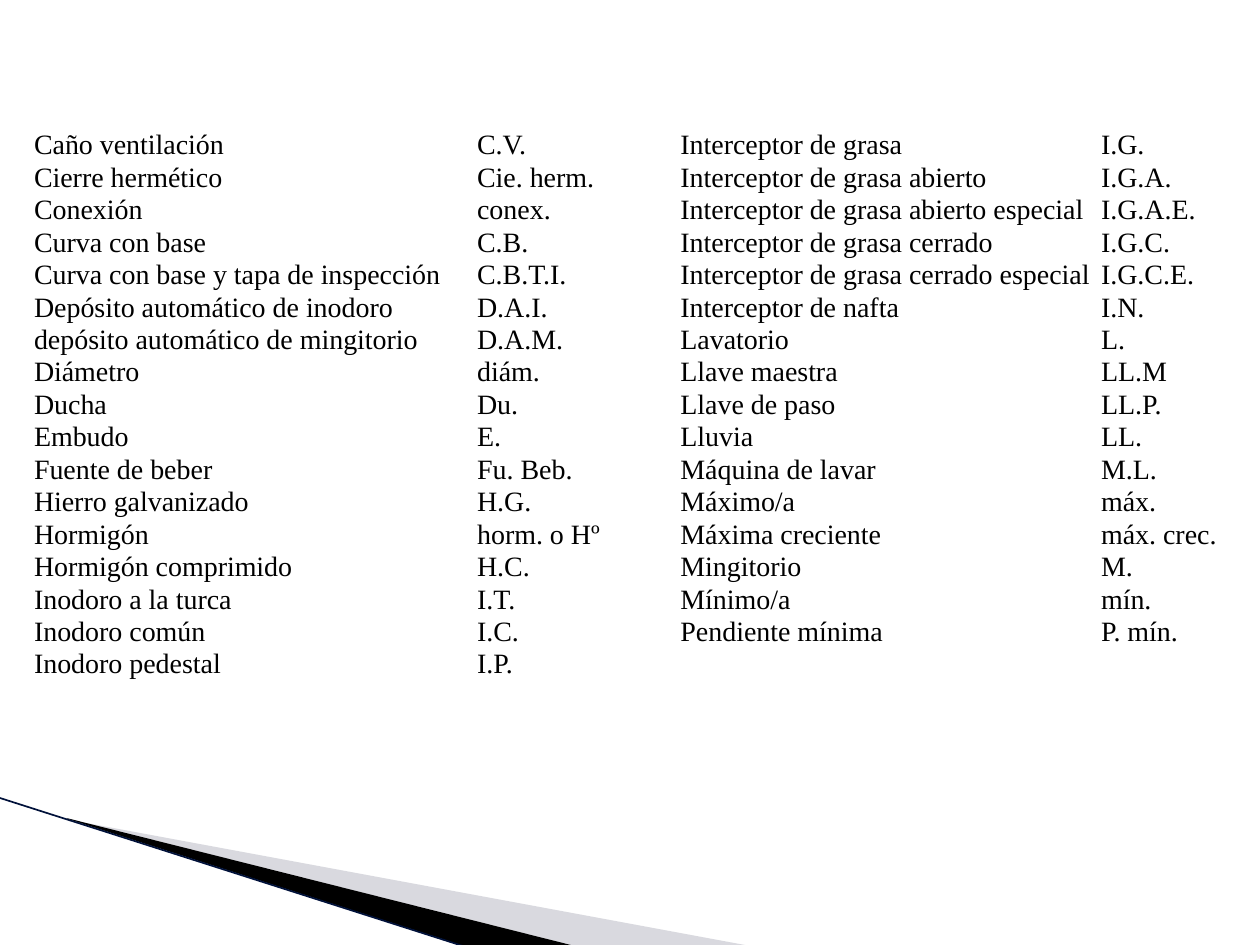
from dataclasses import dataclass

from lxml.etree import SubElement
from pptx import Presentation
from pptx.dml.color import RGBColor
from pptx.enum.shapes import MSO_CONNECTOR as Connector
from pptx.enum.text import MSO_ANCHOR as Anchor
from pptx.oxml.ns import qn
from pptx.slide import Slide
from pptx.util import Pt

COLORS = {"text": "000000", "band": "000000", "shade": "A1A2B0", "edge": "00113A"}
FONT = "Times New Roman"
FONT_SIZE = 16
ROW_HEIGHT = 15.12
FRAME_ROW_HEIGHT = 19.94
TABLE_TOP = 73.44
CELL_MARGIN = 0.75
PLAIN_STYLE = "{2D5ABB26-0587-4C30-8999-92F81FD0307C}"


@dataclass
class Wedge:
    frame: tuple[float, float, float, float]
    points: list[tuple[float, float]]
    color: str
    opacity: int = 100


@dataclass
class AbbreviationTable:
    left: float
    column_widths: tuple[float, float]
    rows: list[tuple[str, str]]


WEDGES = [
    Wedge((56.2, 393.8, 299.5, 113.8),
          [(39.6, 468.5), (428.4, 540.5), (328.3, 540.5), (39.6, 468)], "shade", 40),
    Wedge((-4.3, 455.8, 299.5, 66.2),
          [(38.2, 467.5), (329, 540.7), (267.8, 541.4), (38.9, 468)], "band"),
]

TABLES = [
    AbbreviationTable(18.7, (253.2, 77), [
        ("Caño ventilación", "C.V."),
        ("Cierre hermético", "Cie. herm."),
        ("Conexión", "conex."),
        ("Curva con base", "C.B."),
        ("Curva con base y tapa de inspección", "C.B.T.I."),
        ("Depósito automático de inodoro", "D.A.I."),
        ("depósito automático de mingitorio", "D.A.M."),
        ("Diámetro", "diám."),
        ("Ducha", "Du."),
        ("Embudo", "E."),
        ("Fuente de beber", "Fu. Beb."),
        ("Hierro galvanizado", "H.G."),
        ("Hormigón", "horm. o Hº"),
        ("Hormigón comprimido", "H.C."),
        ("Inodoro a la turca", "I.T."),
        ("Inodoro común", "I.C."),
        ("Inodoro pedestal", "I.P."),
    ]),
    AbbreviationTable(388.1, (240.4, 72.8), [
        ("Interceptor de grasa", "I.G."),
        ("Interceptor de grasa abierto", "I.G.A."),
        ("Interceptor de grasa abierto especial", "I.G.A.E."),
        ("Interceptor de grasa cerrado", "I.G.C."),
        ("Interceptor de grasa cerrado especial", "I.G.C.E."),
        ("Interceptor de nafta", "I.N."),
        ("Lavatorio", "L."),
        ("Llave maestra", "LL.M"),
        ("Llave de paso", "LL.P."),
        ("Lluvia", "LL."),
        ("Máquina de lavar", "M.L."),
        ("Máximo/a", "máx."),
        ("Máxima creciente", "máx. crec."),
        ("Mingitorio", "M."),
        ("Mínimo/a", "mín."),
        ("Pendiente mínima", "P. mín."),
    ]),
]


def color(name: str) -> RGBColor:
    return RGBColor.from_string(COLORS[name])


def draw_wedge(slide: Slide, wedge: Wedge) -> None:
    points = [(Pt(x), Pt(y)) for x, y in wedge.points]
    builder = slide.shapes.build_freeform(*points[0])
    builder.add_line_segments(points[1:], close=True)
    shape = builder.convert_to_shape()
    left, top, width, height = (Pt(length) for length in wedge.frame)
    outline = next(shape._element.iter(qn("a:path")))
    outline.set("w", str(width))
    outline.set("h", str(height))
    for vertex, (x, y) in zip(outline.iter(qn("a:pt")), points):
        vertex.set("x", str(x - left))
        vertex.set("y", str(y - top))
    shape.left, shape.top, shape.width, shape.height = left, top, width, height
    shape.shadow.inherit = False
    shape.fill.solid()
    shape.fill.fore_color.rgb = color(wedge.color)
    shape.line.fill.background()
    if wedge.opacity < 100:
        fill_color = shape.fill._xPr.find(qn("a:solidFill"))[0]
        SubElement(fill_color, qn("a:alpha")).set("val", str(wedge.opacity * 1000))


def draw_edge(slide: Slide) -> None:
    edge = slide.shapes.add_connector(
        Connector.STRAIGHT, Pt(-0.7), Pt(455.8), Pt(267.1), Pt(541.4))
    edge.line.color.rgb = color("edge")
    edge.line.width = Pt(0.95)
    SubElement(edge._element.spPr, qn("a:effectLst"))


def draw_table(slide: Slide, content: AbbreviationTable) -> None:
    row_count = len(content.rows)
    frame_height = Pt(FRAME_ROW_HEIGHT * row_count)
    frame = slide.shapes.add_table(
        row_count, 2, Pt(content.left), Pt(TABLE_TOP),
        Pt(sum(content.column_widths)), frame_height)
    table = frame.table
    table.first_row = False
    table.horz_banding = False
    next(frame._element.iter(qn("a:tableStyleId"))).text = PLAIN_STYLE
    for column, width in zip(table.columns, content.column_widths):
        column.width = Pt(width)
    for row, texts in zip(table.rows, content.rows):
        row.height = Pt(ROW_HEIGHT)
        for cell, text in zip(row.cells, texts):
            cell.fill.background()
            cell.vertical_anchor = Anchor.BOTTOM
            cell.margin_left = cell.margin_right = cell.margin_top = Pt(CELL_MARGIN)
            cell.margin_bottom = Pt(0)
            cell.text_frame.text = text
            font = cell.text_frame.paragraphs[0].runs[0].font
            font.name = FONT
            font.size = Pt(FONT_SIZE)
            font.color.rgb = color("text")
    frame.height = frame_height


def main() -> None:
    presentation = Presentation()
    presentation.slide_width = Pt(720)
    presentation.slide_height = Pt(540)
    slide = presentation.slides.add_slide(presentation.slide_layouts[6])
    for wedge in WEDGES:
        draw_wedge(slide, wedge)
    draw_edge(slide)
    for content in TABLES:
        draw_table(slide, content)
    presentation.save("out.pptx")


if __name__ == "__main__":
    main()
